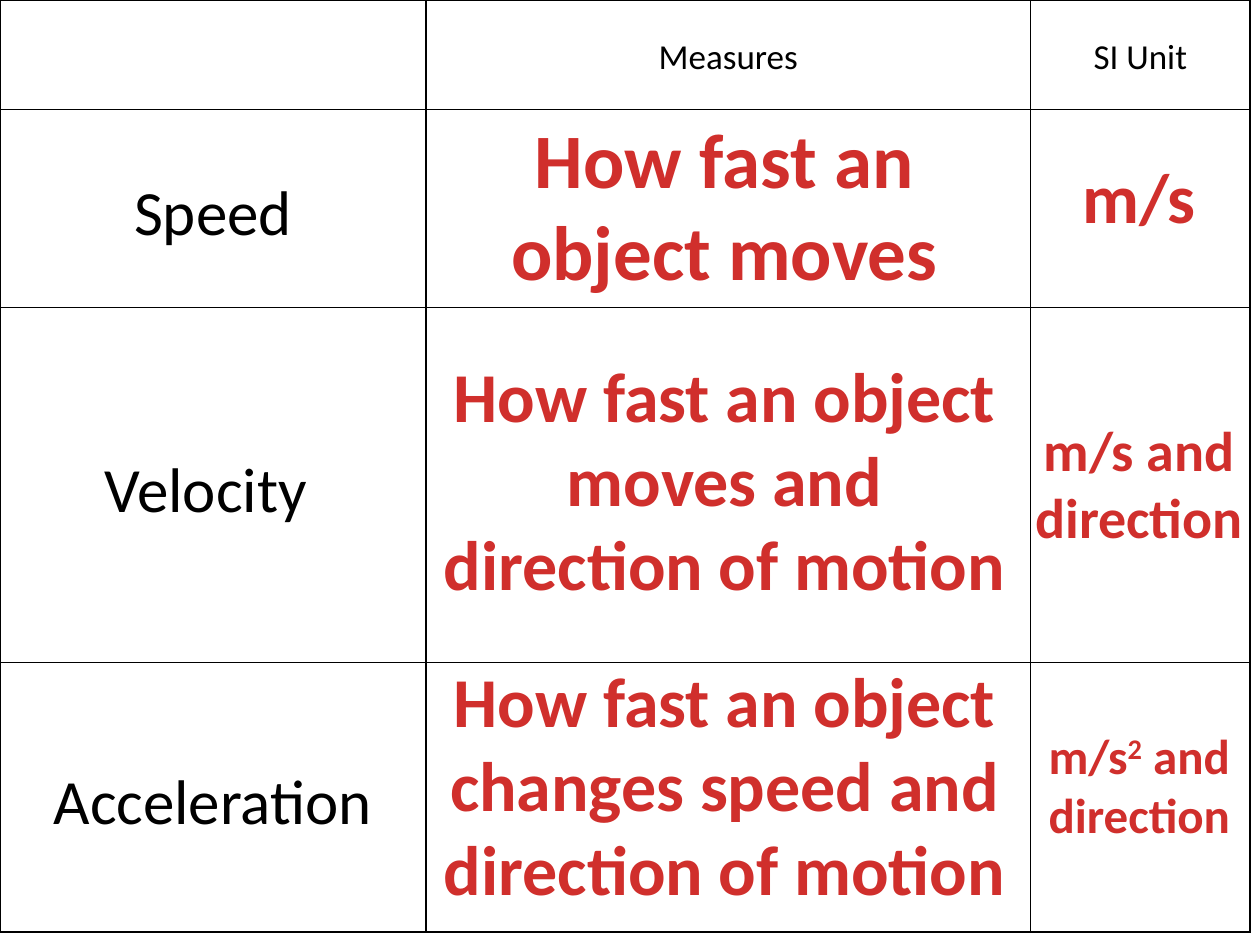
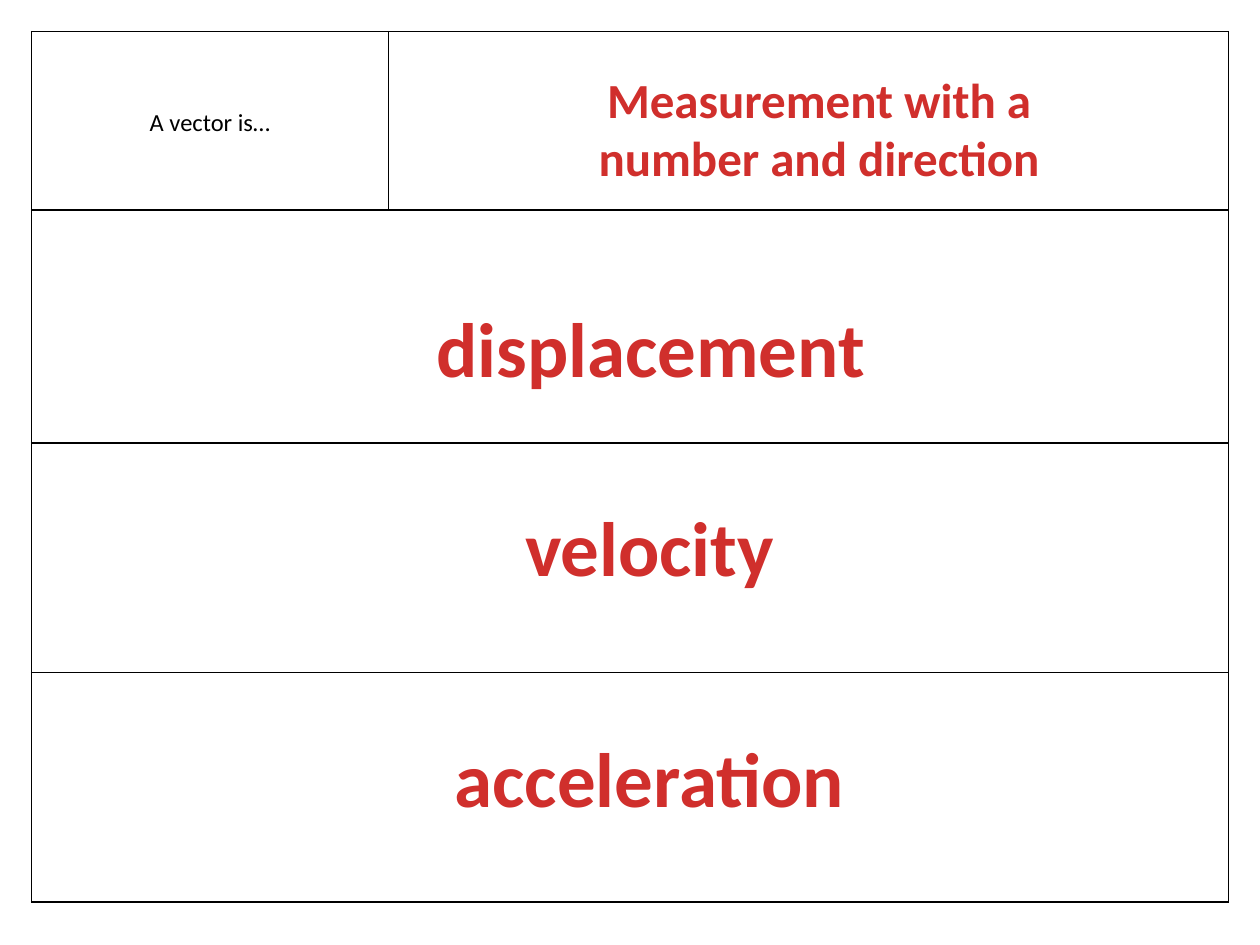
from dataclasses import dataclass

from lxml.etree import SubElement
from pptx import Presentation
from pptx.dml.color import RGBColor
from pptx.enum.text import MSO_ANCHOR, PP_ALIGN
from pptx.oxml.ns import qn
from pptx.util import Pt


@dataclass(frozen=True)
class Theme:
    font: str = "Calibri"
    ink: str = "000000"
    answer: str = "D02F2C"
    note: int = 14
    heading: int = 20
    small: int = 28
    medium: int = 32
    term: int = 36
    large: int = 40
    huge: int = 44


theme = Theme()


def write(frame, text, size, color=theme.ink, bold=False, line_spacing=None):
    """Write one centred paragraph; text between ^ marks is superscript."""
    paragraph = frame.paragraphs[0]
    paragraph.alignment = PP_ALIGN.CENTER
    paragraph.line_spacing = line_spacing
    for index, part in enumerate(text.split("^")):
        run = paragraph.add_run()
        run.text = part
        run.font.name = theme.font
        run.font.size = Pt(size)
        run.font.bold = bold
        run.font.color.rgb = RGBColor.from_string(color)
        if index % 2:
            run.font._element.set("baseline", "30000")


def add_grid(slide, left, top, columns, rows):
    """Add an unfilled table with thin black borders on every cell."""
    table = slide.shapes.add_table(len(rows), len(columns), Pt(left), Pt(top),
                                   Pt(sum(columns)), Pt(sum(rows))).table
    table.first_row = table.horz_banding = False
    for column, width in zip(table.columns, columns):
        column.width = Pt(width)
    for row, height in zip(table.rows, rows):
        row.height = Pt(height)
    for cell in table.iter_cells():
        cell.vertical_anchor = MSO_ANCHOR.MIDDLE
        cell.margin_left = cell.margin_right = Pt(5)
        cell.margin_top = cell.margin_bottom = 0
        properties = cell._tc.get_or_add_tcPr()
        for side in ("a:lnL", "a:lnR", "a:lnT", "a:lnB"):
            line = SubElement(properties, qn(side), w=str(Pt(1)))
            fill = SubElement(line, qn("a:solidFill"))
            SubElement(fill, qn("a:srgbClr"), val=theme.ink)
        cell.fill.background()
    return table


presentation = Presentation()
presentation.slide_width, presentation.slide_height = Pt(720), Pt(540)
blank_layout = presentation.slide_layouts[6]

# Slide 1: quantities of motion
motion_slide = presentation.slides.add_slide(blank_layout)
motion_table = add_grid(motion_slide, 0, 0, (243.4, 345.6, 125.3), (62.6, 113, 203, 154))
motion_labels = [
    (0, 1, "Measures", theme.heading),
    (0, 2, "SI Unit", theme.heading),
    (1, 0, "Speed", theme.term),
    (2, 0, "Velocity ", theme.term),
    (3, 0, "Acceleration", theme.term),
]
for row, column, label, size in motion_labels:
    write(motion_table.cell(row, column).text_frame, label, size, line_spacing=1.15)

# Slide 2: vectors
vector_slide = presentation.slides.add_slide(blank_layout)
vector_table = add_grid(vector_slide, 18, 18, (204, 480), (102, 133.2, 131.2, 131.2))
for row in range(1, 4):
    vector_table.cell(row, 0).merge(vector_table.cell(row, 1))
write(vector_table.cell(0, 0).text_frame, "A vector is…", theme.note, line_spacing=1.15)

# Answers over the tables: slide, left, top, width, height, text, size
answers = [
    (motion_slide, 240, 60, 348, 114, "How fast an object moves", theme.huge),
    (motion_slide, 240, 198, 348, 153,
     "How fast an object moves and direction of motion", theme.large),
    (motion_slide, 240, 372, 348, 153,
     "How fast an object changes speed and direction of motion", theme.large),
    (motion_slide, 564, 84, 174, 55.4, "m/s", theme.large),
    (motion_slide, 564, 234, 174, 85, "m/s and direction", theme.medium),
    (motion_slide, 588, 411, 126, 75, "m/s^2^ and direction", theme.small),
    (vector_slide, 294, 36, 348, 75,
     "Measurement with a number and direction", theme.small),
    (vector_slide, 198, 168, 348, 60.5, "displacement", theme.huge),
    (vector_slide, 197.3, 282, 348, 60.5, "velocity", theme.huge),
    (vector_slide, 197.3, 414, 348, 60.5, "acceleration", theme.huge),
]
for slide, left, top, width, height, text, size in answers:
    box = slide.shapes.add_textbox(Pt(left), Pt(top), Pt(width), Pt(height))
    box.text_frame.word_wrap = True
    write(box.text_frame, text, size, color=theme.answer, bold=True)

presentation.save("out.pptx")
